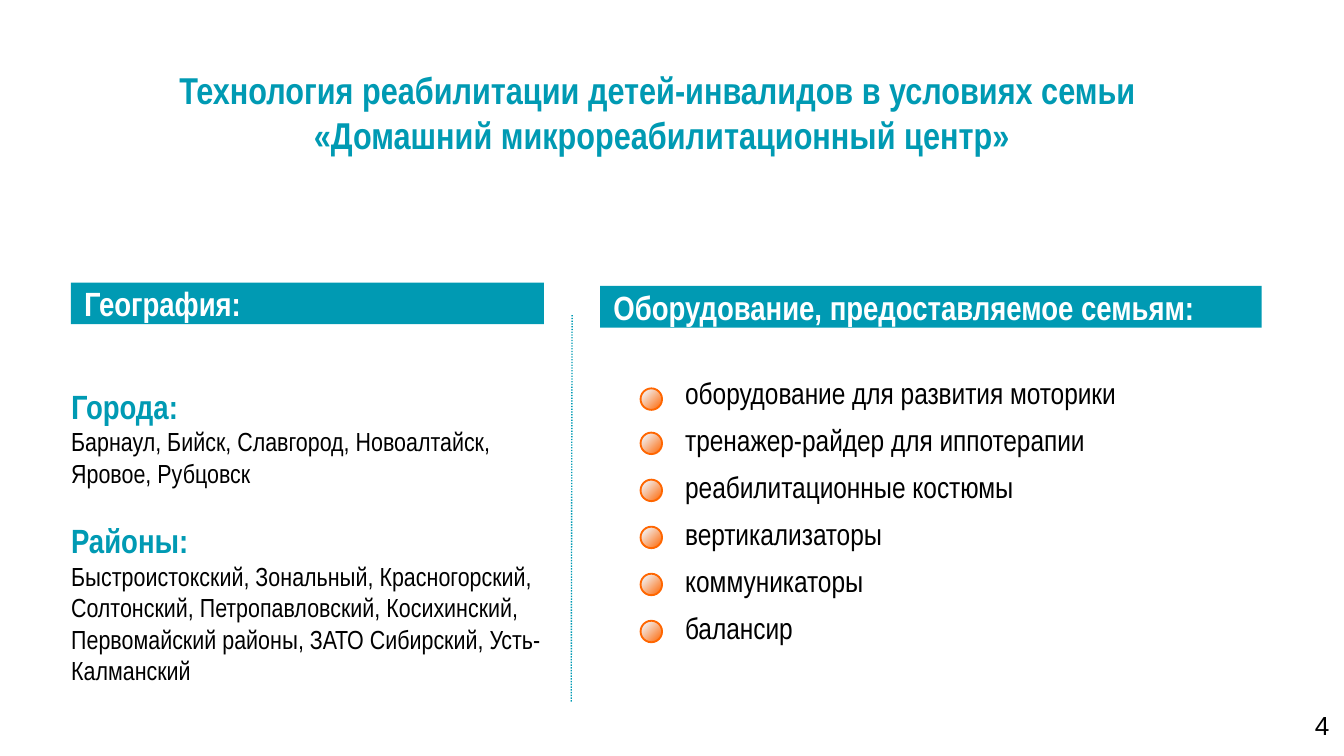
from pptx import Presentation
from pptx.dml.color import RGBColor
from pptx.enum import dml, shapes, text
from pptx.oxml import parse_xml
from pptx.oxml.ns import nsdecls
from pptx.util import Pt

TEAL, BLACK, WHITE, ORANGE = "009AB3", "000000", "FFFFFF", "FF6600"
HEAD = {"name": "Arial Narrow", "size": Pt(18), "bold": True}
BODY = {"name": "Arial Narrow", "size": Pt(14), "bold": False}


def rgb(code):
    return RGBColor.from_string(code)


def write(frame, rows, align=text.PP_ALIGN.LEFT):
    """Fill a text frame; each row is (words, format, colour, space before)."""
    frame.word_wrap = True
    for i, (words, form, color, gap) in enumerate(rows):
        para = frame.paragraphs[0] if i == 0 else frame.add_paragraph()
        para.alignment = align
        if gap:
            para.space_before = Pt(gap)
        run = para.add_run()
        run.text = words
        for key, val in form.items():
            setattr(run.font, key, val)
        run.font.color.rgb = rgb(color)


deck = Presentation()
deck.slide_width, deck.slide_height = Pt(720), Pt(405)
slide = deck.slides.add_slide(deck.slide_layouts[6])
items = slide.shapes

# Title, place lists, equipment list and page number
title = {**HEAD, "size": Pt(20)}
tool = {**BODY, "size": Pt(16)}
tools = [
    "оборудование для развития моторики",
    "тренажер-райдер для иппотерапии",
    "реабилитационные костюмы",
    "вертикализаторы",
    "коммуникаторы",
    "балансир",
]
boxes = [
    ((67.7, 32.4, 573.8, 55.4), text.PP_ALIGN.CENTER, [
        ("Технология реабилитации детей-инвалидов в условиях семьи ", title, TEAL, 0),
        ("«Домашний микрореабилитационный центр»", title, TEAL, 0),
    ]),
    ((31, 203, 267.1, 170), text.PP_ALIGN.LEFT, [
        ("Города:", HEAD, TEAL, 0),
        ("Барнаул, Бийск, Славгород, Новоалтайск, Яровое, Рубцовск", BODY, BLACK, 0),
        ("Районы:", HEAD, TEAL, 16.8),
        ("Быстроистокский, Зональный, Красногорский, Солтонский, "
         "Петропавловский, Косихинский, Первомайский районы, "
         "ЗАТО Сибирский, Усть-Калманский", BODY, BLACK, 0),
    ]),
    ((360, 197.3, 326.2, 154), text.PP_ALIGN.LEFT,
     [(name, tool, BLACK, 6 if i else 0) for i, name in enumerate(tools)]),
    ((551.5, 376.6, 167.8, 28), text.PP_ALIGN.RIGHT,
     [("4", {"name": "Arial", "size": Pt(14)}, BLACK, 0)]),
]
for area, align, rows in boxes:
    box = items.add_textbox(*map(Pt, area))
    write(box.text_frame, rows, align)

# Column headings
bars = [
    ("География:", 38, 151.4, 253.4),
    ("Оборудование, предоставляемое семьям:", 321.6, 153.2, 354.4),
]
for words, left, top, width in bars:
    bar = items.add_shape(shapes.MSO_SHAPE.RECTANGLE,
                          Pt(left), Pt(top), Pt(width), Pt(22.3))
    bar.shadow.inherit = False
    bar.fill.solid()
    bar.fill.fore_color.rgb = rgb(TEAL)
    bar.line.fill.background()
    bar.text_frame.vertical_anchor = text.MSO_ANCHOR.MIDDLE
    write(bar.text_frame, [(words, HEAD, WHITE, 0)])

# Dotted line between the columns
rule = items.add_connector(shapes.MSO_CONNECTOR.STRAIGHT,
                           Pt(306.5), Pt(168.8), Pt(306), Pt(376.6))
rule.line.color.rgb = rgb(TEAL)
rule.line.width = Pt(0.75)
rule.line.dash_style = dml.MSO_LINE.ROUND_DOT
rule._element.spPr.append(parse_xml(f"<a:effectLst {nsdecls('a')}/>"))

# Orange bullets, shaded towards the lower right
SHADE = f"""<a:gradFill {nsdecls('a')} rotWithShape="1"><a:gsLst>
<a:gs pos="0"><a:srgbClr val="{ORANGE}"/></a:gs>
<a:gs pos="85000"><a:srgbClr val="F2F2F2"/></a:gs></a:gsLst>
<a:path path="circle"><a:fillToRect l="100000" t="100000"/></a:path></a:gradFill>"""
tops = [208.1] + [231.8 + 25.2 * i for i in range(len(tools) - 1)]
for top in tops:
    dot = items.add_shape(shapes.MSO_SHAPE.OVAL, Pt(343.2), Pt(top), Pt(11.5), Pt(11.5))
    dot.shadow.inherit = False
    dot._element.spPr.prstGeom.addnext(parse_xml(SHADE))
    dot.line.color.rgb = rgb(ORANGE)
    dot.line.width = Pt(1)

deck.save("out.pptx")
